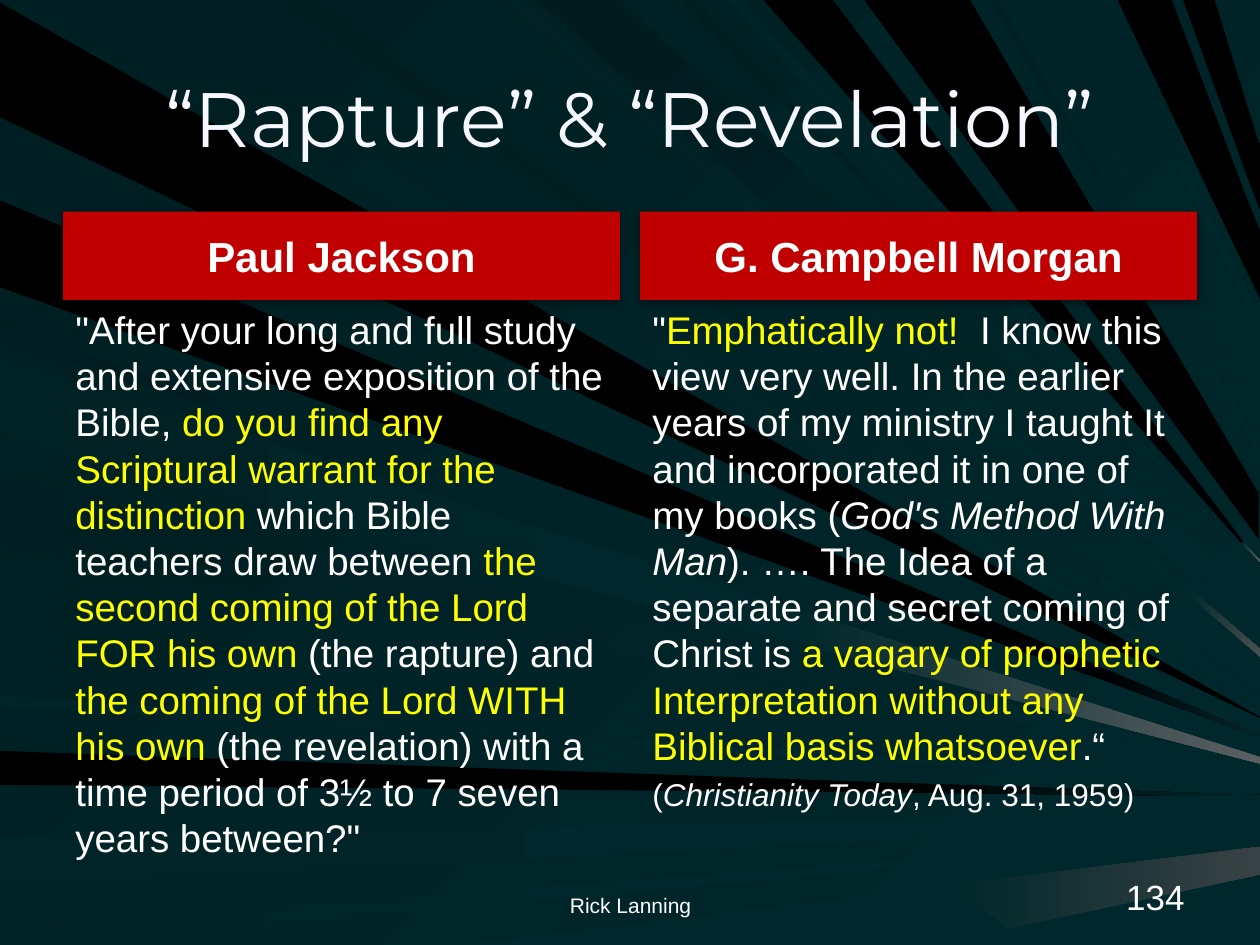
"""Builds a quotation slide with two columns over a dark fan of rays."""
from lxml.etree import SubElement
from pptx import Presentation
from pptx.dml.color import RGBColor
from pptx.enum.shapes import MSO_SHAPE
from pptx.enum.text import MSO_ANCHOR, PP_ALIGN
from pptx.oxml.ns import qn
from pptx.util import Inches, Pt

BLACK, TEAL, WHITE, YELLOW, RED = "000000", "00272B", "FFFFFF", "FFFF00", "C00000"

RAYS = [
    ([BLACK], 0, "5.56,3.17 0,0.02 0,0.93 5.29,3.45 10,5.7 10,5.69"),
    (["001F23", TEAL], 45, "5.77,2.98 1.01,0 0.26,0 5.63,3.1 10,5.63 10,5.62"),
    ([BLACK], 0, "0,6.23 7.01,6.29 7.01,6.21 0,5.96"),
    ([BLACK, TEAL], 0, "10,6.32 10,6.31 7.01,6.21 7.01,6.29"),
    (["002427", TEAL], 0, "0,7.04 8.31,6.6 8.31,6.47 0,6.65"),
    ([TEAL], 0, "10,6.51 10,6.43 8.31,6.47 8.31,6.6"),
    ([TEAL], 0, "10,6.62 6.28,6.89 6.28,6.97"),
    (["002225", TEAL], 0, "0,7.5 0.54,7.5 6.28,6.97 6.28,6.89 0,7.35"),
    ([TEAL], 0, "7.42,7.5 8.01,7.37 7.56,7.02 3.64,7.5"),
    ([TEAL, "394244"], 0, "10,6.94 10,6.72 7.56,7.02 8,7.37"),
    ([TEAL], 0, "10,5.89 8.73,5.47 8.73,5.48"),
    (["001E21", TEAL], 45, "0,2.7 8.73,5.48 8.73,5.47 0,2.58"),
    ([BLACK, TEAL], 0, "10,5.85 10,5.84 8.73,5.29 8.73,5.39"),
    ([BLACK], 0, "0,2.28 8.73,5.39 8.73,5.29 0,1.59"),
    (["002125", TEAL], 45, "3.98,0 9.44,4.73 9.47,4.69 4.16,0"),
    ([TEAL, "4A5152"], 45, "10,5.21 10,5.15 9.47,4.69 9.44,4.73"),
    ([TEAL], 0, "10,5.07 10,4.79 9.68,4.49 9.51,4.65"),
    (["001C1F", TEAL], 45, "4.26,0 9.51,4.65 9.68,4.49 4.92,0"),
    (["FF9999"], 0, "10,4.63 9.77,4.4"),
    (["001D20", TEAL], 45, "5.4,0 9.77,4.4 5.52,0"),
    ([BLACK], 0, "6.06,0 9.85,4.31 9.87,4.3 6.61,0"),
    ([TEAL, "5A5F60"], 45, "10,4.46 10,4.45 9.87,4.3 9.85,4.31"),
    ([BLACK], 0, "10,2.37 10,1.83 9.86,1.48 9.73,1.81"),
    ([BLACK], 0, "8.87,0 9.73,1.81 9.86,1.48 9.3,0"),
    ([BLACK], 0, "9.64,0 9.39,0 9.89,1.38 9.99,1.13"),
    ([BLACK], 0, "9.89,1.38 10,1.67 10,1.14 9.99,1.13"),
    (["002023", TEAL], 45, "0,3.42 9.99,6.02 9.99,5.96 0,2.78"),
    (["001F23", TEAL], 45, "0,4.37 9.99,6.06 9.99,6.05 0,3.74"),
    (["002428", TEAL], 0, "0,5.6 9.99,6.23 9.99,6.21 0,5.52"),
    (["001D1F", TEAL], 45, "2.25,0 9.99,5.52 9.99,5.47 2.47,0"),
    (["002428", TEAL], 45, "5.77,0 9.99,4.54 9.99,4.53 5.88,0"),
    ([BLACK], 0, "7.7,0 6.86,0 9.99,4.28 9.99,3.9 9.98,3.9"),
    (["001F22", TEAL], 45, "7.85,0 9.99,3.6 9.99,3.54 7.92,0"),
    (["002225", TEAL], 45, "8.15,0 9.99,3.36 9.99,3.35 8.24,0"),
    (["002327", TEAL], 45, "9.99,2.49 8.72,0 8.65,0 9.99,2.58"),
    (["002225", TEAL], 0, "0,2.83 0,3.47 6.33,5.11 6.35,4.98 6.37,4.85"),
    ([TEAL, "5A5F60"], 0, "10,6.01 6.37,4.85 6.35,4.98 6.33,5.11 10,6.06"),
]

ASK = [[
    ('"After your long and full study and extensive exposition of the Bible, ', WHITE, False),
    ("do you find any Scriptural warrant for the distinction ", YELLOW, False),
    ("which Bible teachers draw between ", WHITE, False),
    ("the second coming of the Lord FOR his own", YELLOW, False),
    (" (the rapture) and ", WHITE, False),
    ("the coming of the Lord WITH his own ", YELLOW, False),
    ('(the revelation) with a time period of 3½ to 7 seven years between?"', WHITE, False),
]]
REPLY = [[
    ('"', WHITE, False),
    ("Emphatically not!  ", YELLOW, False),
    ("I know this view very well. In the earlier years of my ministry I taught It "
     "and incorporated it in one of my books (", WHITE, False),
    ("God's Method With Man", WHITE, True),
    ("). …. The Idea of a separate and secret coming of Christ is ", WHITE, False),
    ("a vagary of prophetic Interpretation without any Biblical basis whatsoever", YELLOW, False),
    (".“", WHITE, False),
], [
    ("(", WHITE, False),
    ("Christianity Today", WHITE, True),
    (", Aug. 31, 1959)", WHITE, False),
]]


def tint(code):
    return RGBColor.from_string(code)


class Deck:
    def __init__(self):
        self.show = Presentation()
        self.show.slide_width, self.show.slide_height = Inches(10), Inches(7.5)
        self.slide = self.show.slides.add_slide(self.show.slide_layouts[5])
        self.shapes = self.slide.shapes
        self.font = "Arial"

    def paint(self, fill, hues, angle=0):
        if len(hues) == 1:
            fill.solid()
            fill.fore_color.rgb = tint(hues[0])
            return
        fill.gradient()
        fill.gradient_angle = -angle % 360
        for stop, hue in zip(fill.gradient_stops, hues):
            stop.color.rgb = tint(hue)

    def style(self, font, size, hue, bold=False, slant=False, name=None):
        font.name, font.size = name or self.font, Pt(size)
        font.bold, font.italic = bold, slant
        font.color.rgb = tint(hue)

    def ray(self, hues, angle, points):
        spots = [tuple(Inches(float(n)) for n in pair.split(",")) for pair in points.split()]
        pen = self.shapes.build_freeform(*spots[0], scale=1)
        pen.add_line_segments(spots[1:], close=True)
        shape = pen.convert_to_shape()
        shape.shadow.inherit = False
        self.paint(shape.fill, hues, angle)
        shape.line.fill.background()

    def label(self, shape, text, size, hue, align, anchor, bold=False, name=None):
        frame = shape.text_frame
        frame.text, frame.word_wrap, frame.vertical_anchor = text, True, anchor
        line = frame.paragraphs[0]
        line.alignment = align
        self.style(line.runs[0].font, size, hue, bold, name=name)

    def title(self, text, box):
        shape = self.shapes.title
        shape.left, shape.top, shape.width, shape.height = map(Inches, box)
        self.label(shape, text, 44, "F7F7FF", PP_ALIGN.CENTER, MSO_ANCHOR.MIDDLE, name="Montserrat")
        node = shape._element
        node.getparent().append(node)

    def banner(self, text, box):
        shape = self.shapes.add_shape(MSO_SHAPE.RECTANGLE, *map(Inches, box))
        self.paint(shape.fill, [RED])
        shape.line.fill.background()
        shape.shadow.inherit = False
        glow = SubElement(shape._element.spPr.find(qn("a:effectLst")), qn("a:outerShdw"),
                          blurRad=str(Pt(3.5)), dist=str(Pt(2.2)), dir="5400000", rotWithShape="0")
        shade = SubElement(glow, qn("a:srgbClr"), val=BLACK)
        SubElement(shade, qn("a:alpha"), val="32000")
        self.label(shape, text, 24, WHITE, PP_ALIGN.CENTER, MSO_ANCHOR.MIDDLE, bold=True)

    def quote(self, parts, box):
        frame = self.shapes.add_textbox(*map(Inches, box)).text_frame
        frame.word_wrap = True
        for row, part in enumerate(parts):
            line = frame.add_paragraph() if row else frame.paragraphs[0]
            if row:
                line.space_before = Pt(4)
            for text, hue, slant in part:
                run = line.add_run()
                run.text = text
                self.style(run.font, 18 if row else 22, hue, slant=slant)

    def note(self, text, box, size, align):
        shape = self.shapes.add_textbox(*map(Inches, box))
        self.label(shape, text, size, WHITE, align, MSO_ANCHOR.BOTTOM)


def main():
    deck = Deck()
    deck.paint(deck.slide.background.fill, ["001F22", TEAL], 45)
    for ray in RAYS:
        deck.ray(*ray)
    deck.title("“Rapture” & “Revelation”", (0.5, 0.3, 9, 1.25))
    for left, name, parts in ((0.5, "Paul Jackson", ASK), (5.08, "G. Campbell Morgan", REPLY)):
        deck.banner(name, (left, 1.68, 4.42, 0.7))
        deck.quote(parts, (left, 2.38, 4.42, 4.32))
    deck.note("134", (7.17, 6.83, 2.33, 0.5), 20, PP_ALIGN.RIGHT)
    deck.note("Rick Lanning", (3.42, 6.83, 3.17, 0.5), 12, PP_ALIGN.CENTER)
    deck.show.save("out.pptx")


if __name__ == "__main__":
    main()
